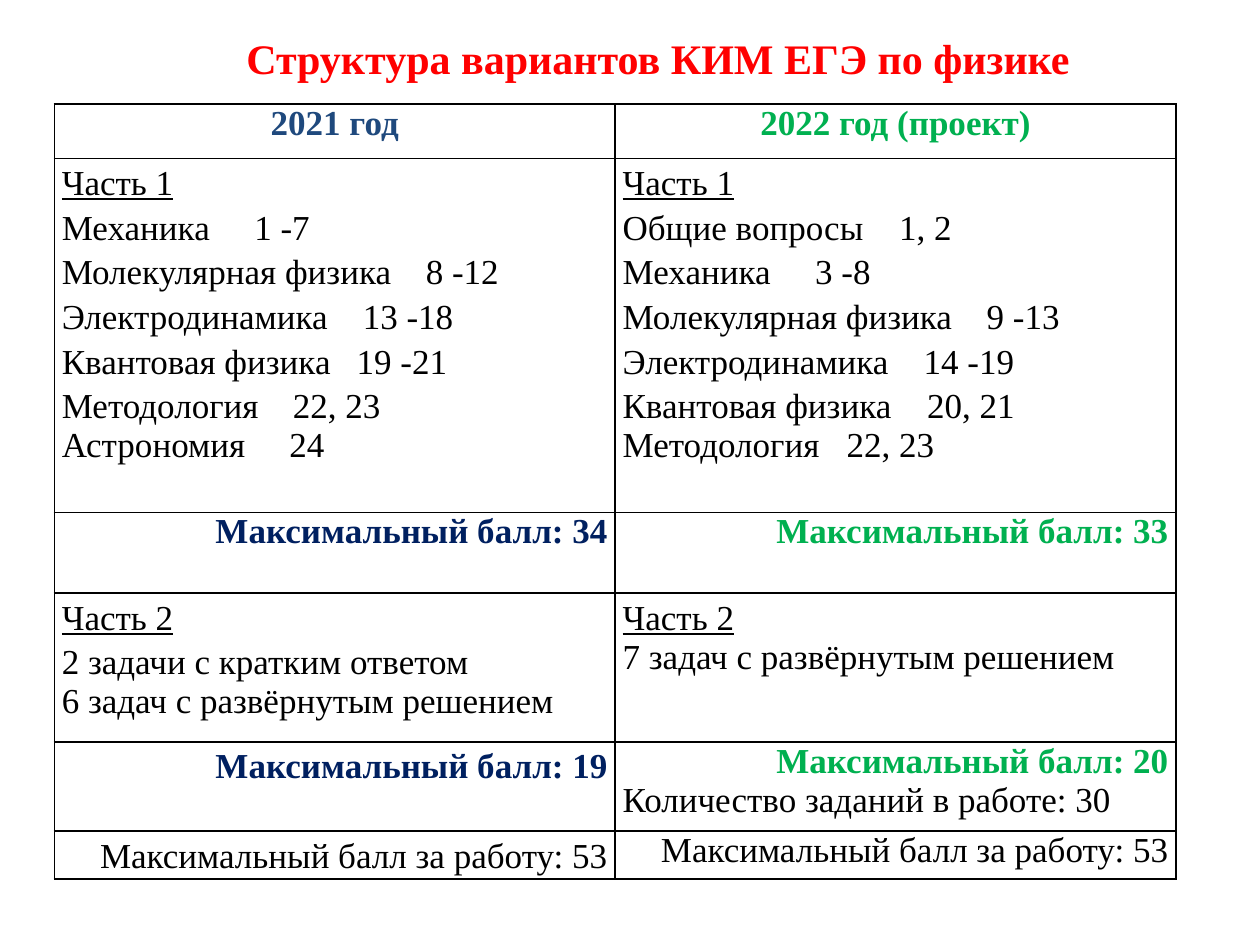
from dataclasses import dataclass

from lxml.etree import SubElement
from pptx import Presentation
from pptx.dml.color import RGBColor
from pptx.enum.text import MSO_AUTO_SIZE, PP_ALIGN
from pptx.oxml.ns import qn
from pptx.util import Pt


@dataclass(frozen=True)
class Theme:
    font: str = "Times New Roman"
    title_size: int = 24
    body_size: int = 20
    red: str = "FF0000"
    blue: str = "1F497D"
    navy: str = "002060"
    green: str = "00B050"
    black: str = "000000"
    white: str = "FFFFFF"


@dataclass(frozen=True)
class Line:
    text: str
    align: PP_ALIGN = PP_ALIGN.LEFT
    color: str = Theme.black
    size: int = Theme.body_size
    bold: bool = False
    underline: bool = False
    spacing: float = 1.0
    tab: float = 0


LOOSE = 1.15


def write_lines(frame, lines):
    for index, line in enumerate(lines):
        paragraph = frame.add_paragraph() if index else frame.paragraphs[0]
        paragraph.text = line.text
        paragraph.alignment = line.align
        paragraph.line_spacing = line.spacing
        if line.tab:
            stops = SubElement(paragraph._p.get_or_add_pPr(), qn("a:tabLst"))
            SubElement(stops, qn("a:tab"), pos=str(Pt(line.tab)), algn="l")
        font = paragraph.font
        font.name = Theme.font
        font.size = Pt(line.size)
        font.bold = line.bold
        font.underline = line.underline
        font.color.rgb = RGBColor.from_string(line.color)


def draw_borders(cell):
    """Put a 1 pt black line on every side; the lines must precede the fill."""
    properties = cell._tc.get_or_add_tcPr()
    for position, side in enumerate(("lnL", "lnR", "lnT", "lnB")):
        border = SubElement(properties, qn(f"a:{side}"), w=str(Pt(1)))
        fill = SubElement(border, qn("a:solidFill"))
        SubElement(fill, qn("a:srgbClr"), val=Theme.black)
        properties.insert(position, border)


# Each topic: name, tab stop of its task numbers, task numbers
topics_2021 = [
    ("Механика", 110, "1 -7"),
    ("Молекулярная физика", 208, "8 -12"),
    ("Электродинамика", 172, "13 -18"),
    ("Квантовая физика", 168.5, "19 -21"),
    ("Методология", 132, "22, 23"),
    ("Астрономия", 130, "24"),
]
topics_2022 = [
    ("Общие вопросы", 158, "1, 2"),
    ("Механика", 110, "3 -8"),
    ("Молекулярная физика", 208, "9 -13"),
    ("Электродинамика", 172, "14 -19"),
    ("Квантовая физика", 174, "20, 21"),
    ("Методология", 128, "22, 23"),
]

part_1 = Line("Часть 1", underline=True, spacing=LOOSE)
part_2 = Line("Часть 2", underline=True, spacing=LOOSE)
topic_cells = []
for topics in (topics_2021, topics_2022):
    topic_lines = [
        Line(f"{name}\t{tasks}", tab=tab, spacing=LOOSE if (name, tab, tasks) != topics[-1] else 1.0)
        for name, tab, tasks in topics
    ]
    topic_cells.append([part_1, *topic_lines])

center, right = PP_ALIGN.CENTER, PP_ALIGN.RIGHT
total = "Максимальный балл за работу: 53"
rows = [
    (31, [Line("2021 год", center, Theme.blue, bold=True)],
         [Line("2022 год (проект)", center, Theme.green, bold=True)]),
    (202.5, *topic_cells),
    (46, [Line("Максимальный балл: 34", right, Theme.navy, bold=True)],
         [Line("Максимальный балл: 33", right, Theme.green, bold=True)]),
    (85, [part_2, Line("2 задачи с кратким ответом", spacing=LOOSE),
          Line("6 задач с развёрнутым решением")],
         [part_2, Line("7 задач с развёрнутым решением")]),
    (51, [Line("Максимальный балл: 19", right, Theme.navy, bold=True, spacing=LOOSE)],
         [Line("Максимальный балл: 20", right, Theme.green, bold=True),
          Line("Количество заданий в работе: 30")]),
    (27.5, [Line(total, right, spacing=LOOSE)], [Line(total, right)]),
]

presentation = Presentation()
presentation.slide_width, presentation.slide_height = Pt(720), Pt(540)
slide = presentation.slides.add_slide(presentation.slide_layouts[6])

table = slide.shapes.add_table(
    len(rows), 2, Pt(31), Pt(59.5), Pt(641), Pt(443)
).table
table.first_row = table.horz_banding = False
for row_index, (height, *contents) in enumerate(rows):
    table.rows[row_index].height = Pt(height)
    for column_index, lines in enumerate(contents):
        cell = table.cell(row_index, column_index)
        cell.margin_left = cell.margin_right = Pt(4.3)
        cell.margin_top = cell.margin_bottom = Pt(0)
        cell.fill.solid()
        cell.fill.fore_color.rgb = RGBColor.from_string(Theme.white)
        draw_borders(cell)
        write_lines(cell.text_frame, lines)

title = slide.shapes.add_textbox(Pt(88), Pt(15), Pt(576), Pt(58)).text_frame
title.word_wrap = True
title.auto_size = MSO_AUTO_SIZE.SHAPE_TO_FIT_TEXT
write_lines(title, [Line("Структура вариантов КИМ ЕГЭ по физике", center,
                         Theme.red, Theme.title_size, bold=True)])

presentation.save("out.pptx")
